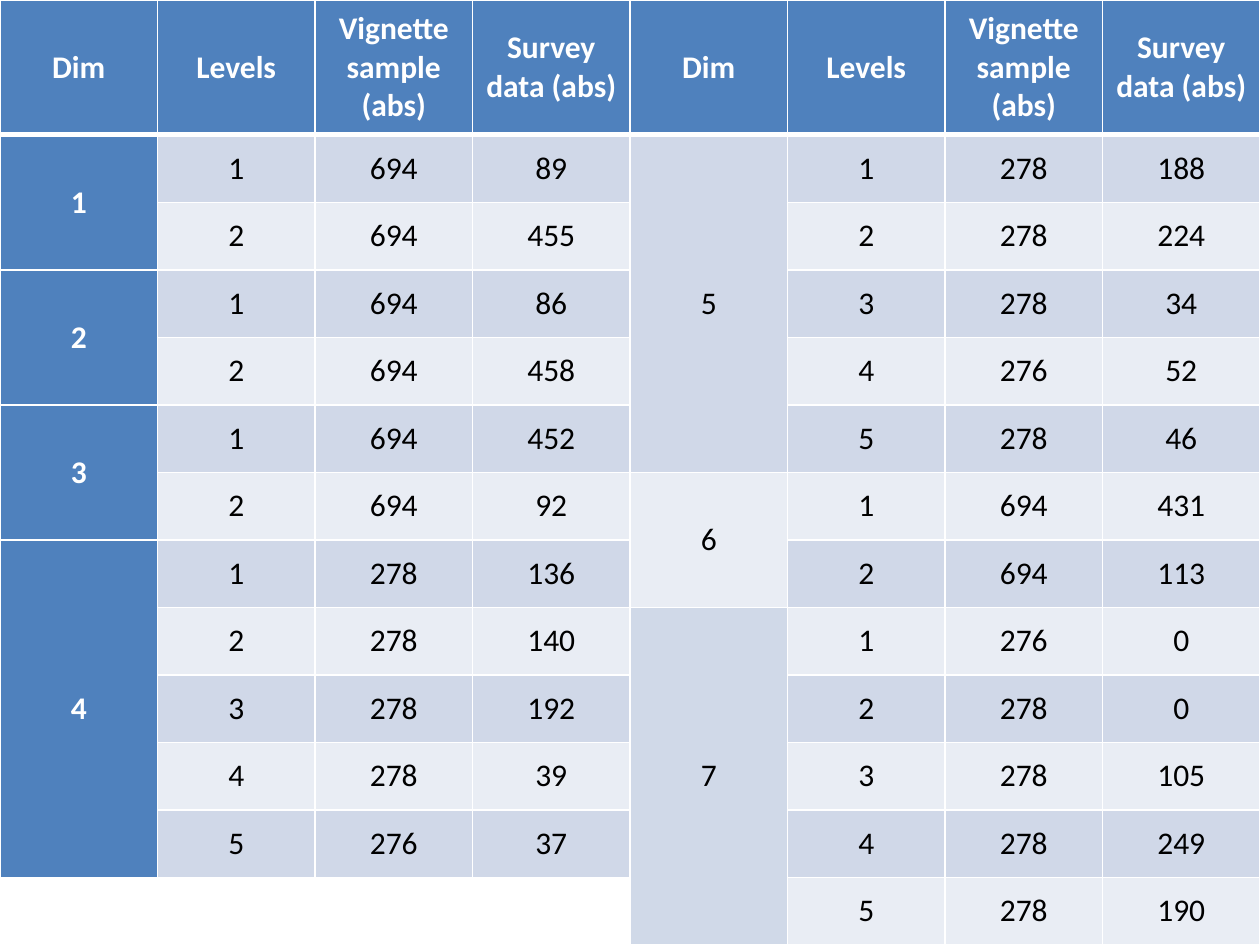
from dataclasses import dataclass

import pptx
import pptx.dml.color
import pptx.enum.text
import pptx.oxml
import pptx.oxml.ns
import pptx.util
from pptx.util import Inches


@dataclass(frozen=True)
class Theme:
    font: str = "Calibri"
    size: int = 18
    accent: str = "4F81BD"
    on_accent: str = "FFFFFF"
    text: str = "000000"
    odd_band: str = "D0D8E8"
    even_band: str = "E9EDF4"
    last_dim: str = "D0D9E8"
    blank: str = "FFFFFF"
    border: str = "FFFFFF"
    thin: int = 1
    thick: int = 3

    def band(self, row):
        return self.odd_band if row % 2 else self.even_band


HEADINGS = ["Dim", "Levels", "Vignette sample (abs)", "Survey data (abs)"]
# Dimension -> (vignette sample, survey data) for each of its levels
LEFT_DIMS = {
    1: [(694, 89), (694, 455)],
    2: [(694, 86), (694, 458)],
    3: [(694, 452), (694, 92)],
    4: [(278, 136), (278, 140), (278, 192), (278, 39), (276, 37)],
}
RIGHT_DIMS = {
    5: [(278, 188), (278, 224), (278, 34), (276, 52), (278, 46)],
    6: [(694, 431), (694, 113)],
    7: [(276, 0), (278, 0), (278, 105), (278, 249), (278, 190)],
}
WIDTH, HEIGHT, HEADER_HEIGHT = 10, 7.5, 1.07
LEVEL_ROWS = sum(len(levels) for levels in RIGHT_DIMS.values())
COLUMNS = 2 * len(HEADINGS)


class SlideBuilder:
    def __init__(self, slide, theme):
        self.slide = slide
        self.theme = theme

    def table(self):
        frame = self.slide.shapes.add_table(
            LEVEL_ROWS + 1, COLUMNS, 0, 0, Inches(WIDTH), Inches(HEIGHT))
        table = frame.table
        for column in table.columns:
            column.width = Inches(WIDTH / COLUMNS)
        for index, row in enumerate(table.rows):
            row.height = Inches((HEIGHT - HEADER_HEIGHT) / LEVEL_ROWS
                                if index else HEADER_HEIGHT)
            for cell in row.cells:
                self.borders(cell, index)
        return table

    def borders(self, cell, row):
        """Draw thin borders, with a thick rule below the header row."""
        theme = self.theme
        thick_side = {0: "B", 1: "T"}.get(row)
        properties = cell._tc.get_or_add_tcPr()
        for side in "LRTB":
            width = theme.thick if side == thick_side else theme.thin
            properties.append(pptx.oxml.parse_xml(
                f'<a:ln{side} {pptx.oxml.ns.nsdecls("a")} w="{pptx.util.Pt(width)}">'
                f'<a:solidFill><a:srgbClr val="{theme.border}"/></a:solidFill>'
                f'</a:ln{side}>'))

    def fill(self, cell, color):
        cell.fill.solid()
        cell.fill.fore_color.rgb = pptx.dml.color.RGBColor.from_string(color)

    def cell(self, cell, text, fill):
        theme = self.theme
        strong = fill == theme.accent
        self.fill(cell, fill)
        cell.margin_left = cell.margin_right = Inches(0.07)
        cell.margin_top = cell.margin_bottom = 0
        cell.vertical_anchor = pptx.enum.text.MSO_ANCHOR.MIDDLE
        paragraph = cell.text_frame.paragraphs[0]
        paragraph.text = str(text)
        paragraph.alignment = pptx.enum.text.PP_ALIGN.CENTER
        font = paragraph.font
        font.name = theme.font
        font.size = pptx.util.Pt(theme.size)
        font.bold = strong
        font.color.rgb = pptx.dml.color.RGBColor.from_string(
            theme.on_accent if strong else theme.text)

    def dimensions(self, table, first_column, dims, dim_fills):
        """Fill one half of the table: headings, merged dimensions, levels."""
        for offset, heading in enumerate(HEADINGS):
            self.cell(table.cell(0, first_column + offset), heading,
                      self.theme.accent)
        row = 1
        for dim, levels in dims.items():
            dim_cell = table.cell(row, first_column)
            dim_cell.merge(table.cell(row + len(levels) - 1, first_column))
            self.cell(dim_cell, dim, dim_fills[dim])
            for level, counts in enumerate(levels, start=1):
                for offset, value in enumerate((level, *counts), start=1):
                    self.cell(table.cell(row, first_column + offset), value,
                              self.theme.band(row))
                row += 1


def main():
    theme = Theme()
    presentation = pptx.Presentation()
    presentation.slide_width = Inches(WIDTH)
    presentation.slide_height = Inches(HEIGHT)
    builder = SlideBuilder(
        presentation.slides.add_slide(presentation.slide_layouts[6]), theme)

    table = builder.table()
    builder.dimensions(table, 0, LEFT_DIMS, dict.fromkeys(LEFT_DIMS, theme.accent))
    builder.dimensions(table, len(HEADINGS), RIGHT_DIMS,
                       {5: theme.odd_band, 6: theme.even_band, 7: theme.last_dim})

    unused = table.cell(LEVEL_ROWS, 0)
    unused.merge(table.cell(LEVEL_ROWS, len(HEADINGS) - 1))
    builder.fill(unused, theme.blank)

    presentation.save("out.pptx")


if __name__ == "__main__":
    main()
